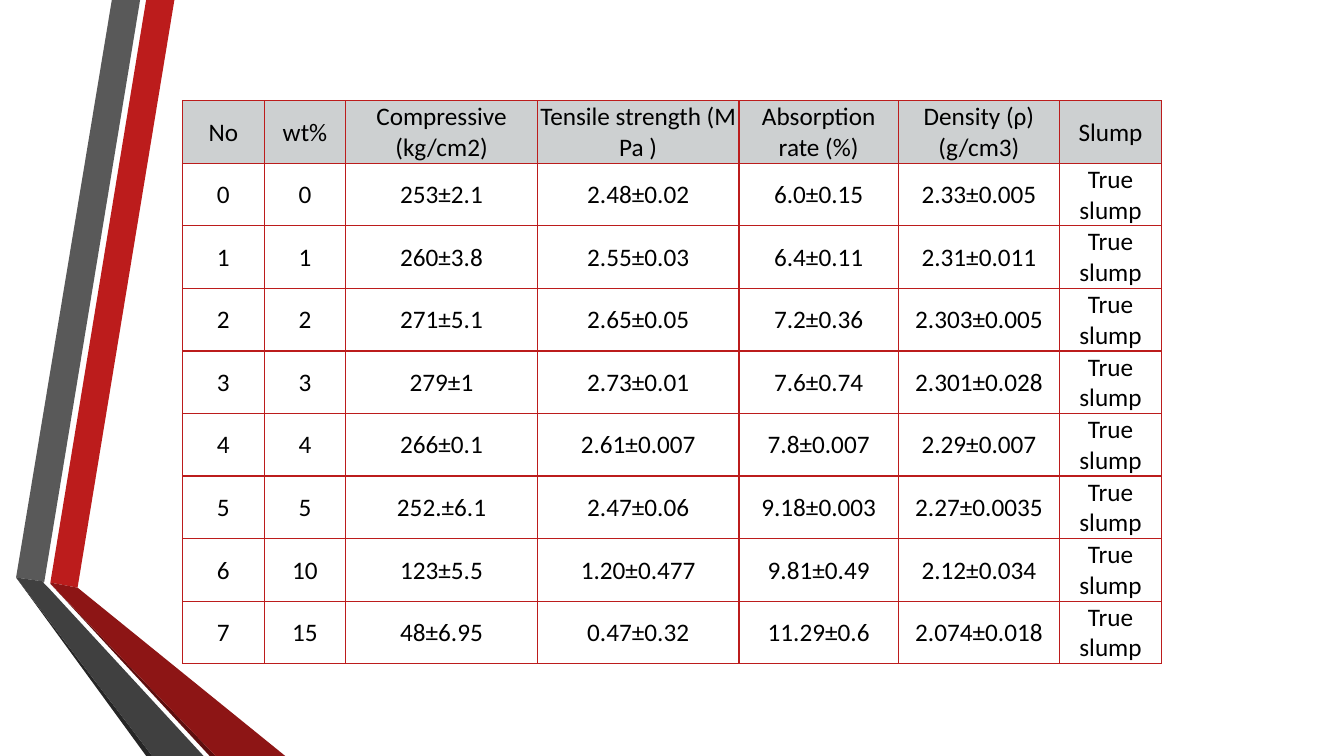
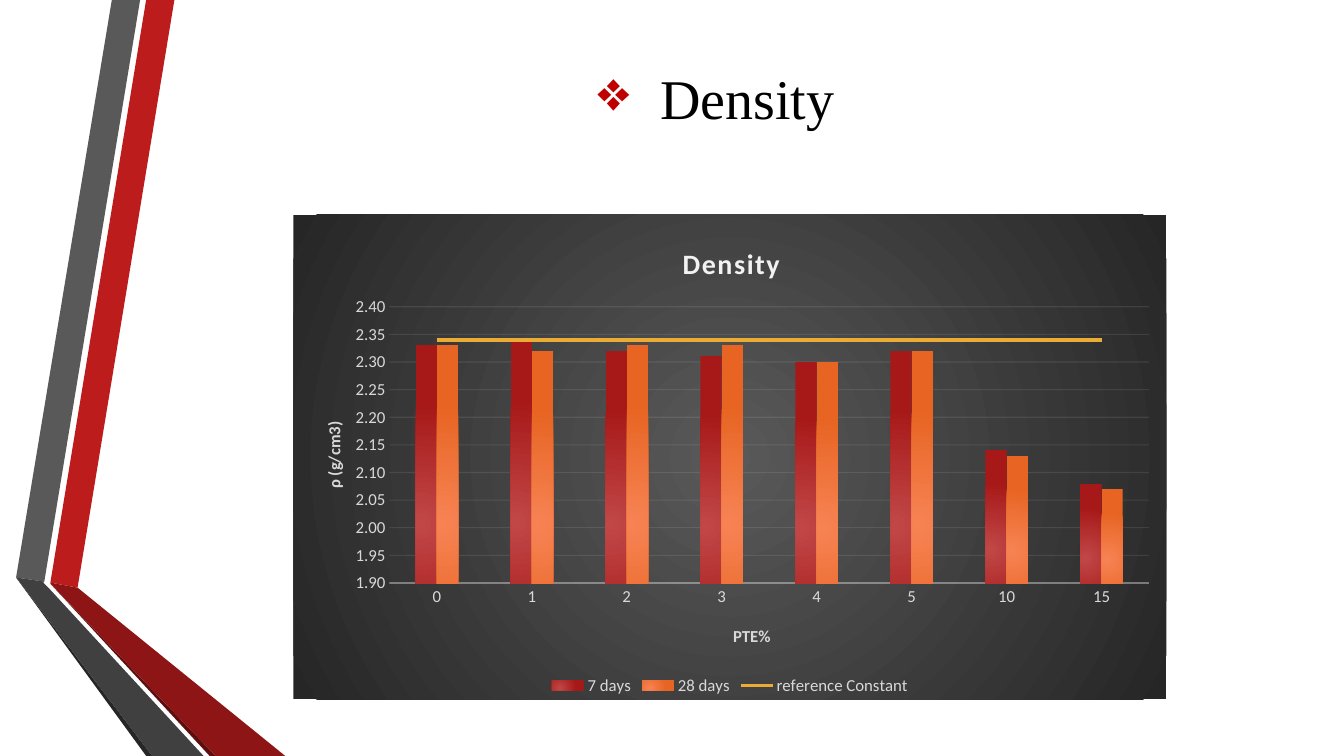
from pptx import Presentation
from pptx.chart.data import CategoryChartData
from pptx.dml.color import RGBColor
from pptx.enum import chart as charts, text as texts
from pptx.oxml import parse_xml
from pptx.oxml.ns import nsdecls, qn
from pptx.util import Inches, Pt

COLOURS = {
    "red": "BC1C1C", "dark_red": "8D1515", "deep_red": "5E0E0E",
    "grey": "595959", "dark_grey": "404040", "deep_grey": "262626",
    "bullet": "C00000", "text": "000000", "header": "CDD0D1",
    "chart_title": "F2F2F2", "chart_text": "D9D9D9", "reference": "EAAC35",
}
BODY_FONT, TITLE_FONT = "Calibri", "Times New Roman"

# Ribbon outlines shared by all slides, back to front
RIBBONS = [
    ("red", [(0.5, 5.78), (0.77, 5.83), (1.73, 0), (1.45, 0)]),
    ("grey", [(1.39, 0), (1.11, 0), (0.16, 5.73), (0.44, 5.77)]),
    ("deep_grey", [(0.16, 5.73), (1.45, 7.5), (1.51, 7.5)]),
    ("deep_red", [(0.5, 5.79), (2.08, 7.5), (2.14, 7.5)]),
    ("dark_red", [(0.5, 5.79), (2.14, 7.5), (2.83, 7.5), (0.77, 5.83), (0.5, 5.78)]),
    ("dark_grey", [(2.02, 7.5), (0.48, 5.83), (0.43, 5.78), (0.44, 5.77),
                   (0.16, 5.73), (1.51, 7.5)]),
]

# Results table
HEADERS = ["No", "wt%", "Compressive (kg/cm2)", "Tensile strength (M Pa )",
           "Absorption rate (%)", "Density (ρ) (g/cm3)", "Slump"]
RESULTS = [
    ("0", "253±2.1", "2.48±0.02", "6.0±0.15", "2.33±0.005"),
    ("1", "260±3.8", "2.55±0.03", "6.4±0.11", "2.31±0.011"),
    ("2", "271±5.1", "2.65±0.05", "7.2±0.36", "2.303±0.005"),
    ("3", "279±1", "2.73±0.01", "7.6±0.74", "2.301±0.028"),
    ("4", "266±0.1", "2.61±0.007", "7.8±0.007", "2.29±0.007"),
    ("5", "252.±6.1", "2.47±0.06", "9.18±0.003", "2.27±0.0035"),
    ("10", "123±5.5", "1.20±0.477", "9.81±0.49", "2.12±0.034"),
    ("15", "48±6.95", "0.47±0.32", "11.29±0.6", "2.074±0.018"),
]
SLUMP = "True slump"
COLUMN_WIDTHS = [0.81, 0.81, 1.9, 2, 1.58, 1.6, 1.01]
ROW_HEIGHT = 0.61

# Density chart
PERCENTAGES = [row[0] for row in RESULTS]
BAR_SERIES = [
    ("7 days", [2.33, 2.34, 2.32, 2.31, 2.3, 2.32, 2.14, 2.08], ("C14747", "A71919")),
    ("28 days", [2.33, 2.32, 2.33, 2.33, 2.3, 2.32, 2.13, 2.07], ("F78354", "E76422")),
]
REFERENCE_NAME, REFERENCE_DENSITY = "reference Constant", 2.34


def rgb(name):
    return RGBColor.from_string(COLOURS[name])


def format_font(font, size, colour="text", name=BODY_FONT, bold=False):
    font.size, font.name, font.bold = Pt(size), name, bold
    font.color.rgb = rgb(colour)


def write_text(text_frame, text, align=texts.PP_ALIGN.CENTER, **font_format):
    text_frame.text = text
    paragraph = text_frame.paragraphs[0]
    paragraph.alignment = align
    format_font(paragraph.runs[0].font, **font_format)
    return paragraph


def add_ribbons(master, slide):
    """Build the ribbons on a slide, then hand them to the master."""
    for number, (colour, points) in enumerate(RIBBONS):
        corners = [(Inches(x), Inches(y)) for x, y in points]
        builder = slide.shapes.build_freeform(*corners[0])
        builder.add_line_segments(corners[1:], close=True)
        shape = builder.convert_to_shape()
        shape.shadow.inherit = False
        shape.fill.solid()
        shape.fill.fore_color.rgb = rgb(colour)
        shape.line.fill.background()
        shape.element.xpath(".//p:cNvPr")[0].set("id", str(100 + number))
        master.shapes.element.insert(2 + number, shape.element)


def add_results_table(slide):
    rows = [HEADERS] + [(str(number), *row, SLUMP) for number, row in enumerate(RESULTS)]
    frame = slide.shapes.add_table(
        len(rows), len(HEADERS), Inches(1.81), Inches(1),
        Inches(sum(COLUMN_WIDTHS)), Inches(ROW_HEIGHT * len(rows)))
    table = frame.table
    table.first_row = table.horz_banding = False
    for column, width in zip(table.columns, COLUMN_WIDTHS):
        column.width = Inches(width)
    for row_number, row in enumerate(rows):
        for column_number, value in enumerate(row):
            cell = table.cell(row_number, column_number)
            write_text(cell.text_frame, value, size=18)
            cell.vertical_anchor = texts.MSO_ANCHOR.MIDDLE
            cell.margin_left = cell.margin_right = cell.margin_top = Inches(0.01)
            cell.margin_bottom = 0
            if row_number == 0:
                cell.fill.solid()
                cell.fill.fore_color.rgb = rgb("header")
            else:
                cell.fill.background()
    # Cell borders
    for properties in frame.element.xpath(".//a:tcPr"):
        for position, side in enumerate("LRTB"):
            properties.insert(position, parse_xml(
                f'<a:ln{side} {nsdecls("a")} w="{Pt(1)}"><a:solidFill>'
                f'<a:srgbClr val="{COLOURS["red"]}"/></a:solidFill></a:ln{side}>'))


def write_title(title, text):
    title.left, title.top = Inches(1.62), Inches(0)
    title.width, title.height = Inches(10.96), Inches(1.92)
    title.text_frame.vertical_anchor = texts.MSO_ANCHOR.MIDDLE
    paragraph = write_text(title.text_frame, text, size=40, name=TITLE_FONT)
    properties = paragraph._p.get_or_add_pPr()
    properties.set("marL", str(Inches(0.62)))
    properties.set("indent", str(-Inches(0.62)))
    properties.append(parse_xml(
        f'<a:buClr {nsdecls("a")}><a:srgbClr val="{COLOURS["bullet"]}"/></a:buClr>'))
    properties.append(parse_xml(f'<a:buChar {nsdecls("a")} char="❖"/>'))


def radial_fill(inner, outer, left, top, right, bottom):
    return parse_xml(
        f'<a:gradFill {nsdecls("a")}><a:gsLst>'
        f'<a:gs pos="0"><a:srgbClr val="{inner}"/></a:gs>'
        f'<a:gs pos="100000"><a:srgbClr val="{outer}"/></a:gs></a:gsLst>'
        f'<a:path path="circle"><a:fillToRect l="{left * 1000}" t="{top * 1000}" '
        f'r="{right * 1000}" b="{bottom * 1000}"/></a:path></a:gradFill>')


def place(element, position, **fractions):
    """Set a manual layout, in fractions of the chart, on a title or plot area."""
    for layout in element.findall(qn("c:layout")):
        element.remove(layout)
    target = '<c:layoutTarget val="inner"/>' if "w" in fractions else ""
    modes = "".join(f'<c:{key}Mode val="edge"/>' for key in "xy")
    values = "".join(f'<c:{key} val="{value}"/>' for key, value in fractions.items())
    element.insert(position, parse_xml(
        f'<c:layout {nsdecls("c")}><c:manualLayout>{target}{modes}{values}'
        f'</c:manualLayout></c:layout>'))


def set_opacity(chart, query, percent):
    for colour in chart.element.xpath(query):
        colour.append(parse_xml(f'<a:alpha {nsdecls("a")} val="{percent * 1000}"/>'))


def move_reference_to_line(chart):
    bars = chart.element.xpath(".//c:barChart")[0]
    reference = bars.findall(qn("c:ser"))[-1]
    for bar_only in reference.findall(qn("c:invertIfNegative")):
        reference.remove(bar_only)
    axes = "".join(f'<c:axId val="{axis.get("val")}"/>' for axis in bars.findall(qn("c:axId")))
    lines = parse_xml(
        f'<c:lineChart {nsdecls("c")}><c:grouping val="standard"/>'
        f'<c:varyColors val="0"/><c:marker val="1"/>{axes}</c:lineChart>')
    lines.insert(2, reference)
    bars.addnext(lines)
    series = chart.plots[1].series[0]
    series.smooth = False
    series.marker.style = charts.XL_MARKER_STYLE.NONE
    series.format.line.width = Pt(2.75)
    series.format.line.color.rgb = rgb("reference")


def add_density_chart(slide):
    data = CategoryChartData(number_format="0.00")
    data.categories = PERCENTAGES
    for name, values, _ in BAR_SERIES:
        data.add_series(name, values)
    data.add_series(REFERENCE_NAME, [REFERENCE_DENSITY] * len(PERCENTAGES))
    chart = slide.shapes.add_chart(
        charts.XL_CHART_TYPE.COLUMN_CLUSTERED, Inches(2.91), Inches(2.13),
        Inches(8.66), Inches(4.81), data).chart
    format_font(chart.font, 12, "chart_text")
    plot = chart.plots[0]
    plot.gap_width, plot.overlap, plot.vary_by_categories = 247, 0, False
    move_reference_to_line(chart)

    # Gradient fills of bars and background
    for number, (series, (_, _, shades)) in enumerate(zip(plot.series, BAR_SERIES), 1):
        series.format.fill.background()
        empty = chart.element.xpath(f".//c:barChart/c:ser[{number}]/c:spPr/a:noFill")[0]
        empty.getparent().replace(empty, radial_fill(*shades, 50, 100, 100, 50))
    background = parse_xml(
        f'<c:spPr {nsdecls("c", "a")}><a:ln><a:noFill/></a:ln></c:spPr>')
    background.insert(0, radial_fill(COLOURS["grey"], COLOURS["deep_grey"], 50, 50, 50, 50))
    chart.element.xpath("./c:chart")[0].addnext(background)

    # Axes
    category_axis, value_axis = chart.category_axis, chart.value_axis
    value_axis.minimum_scale, value_axis.maximum_scale = 1.9, 2.4
    value_axis.major_unit = 0.05
    value_axis.tick_labels.number_format = "0.00"
    value_axis.tick_labels.number_format_is_linked = False
    value_axis.format.line.fill.background()
    for axis in (category_axis, value_axis):
        axis.major_tick_mark = axis.minor_tick_mark = charts.XL_TICK_MARK.NONE
        format_font(axis.tick_labels.font, 12, "chart_text")
    for line, width in ((category_axis.format.line, 1),
                        (value_axis.major_gridlines.format.line, 0.75)):
        line.width = Pt(width)
        line.color.rgb = rgb("chart_title")
    set_opacity(chart, ".//c:catAx/c:spPr//a:srgbClr", 54)
    set_opacity(chart, ".//c:majorGridlines//a:srgbClr", 10)

    # Titles, legend and their places
    for owner, text, size, colour, parent, x, y in (
            (chart, "Density", 20, "chart_title", "c:chart", 0.44, 0.05),
            (category_axis, "PTE%", 12, "chart_text", "c:catAx", 0.5, 0.84),
            (value_axis, "ρ (g/cm3)", 12, "chart_text", "c:valAx", 0.03, 0.42)):
        title = owner.chart_title if owner is chart else owner.axis_title
        paragraph = write_text(title.text_frame, text, size=size, colour=colour, bold=True)
        if owner is chart:
            paragraph.runs[0].font._element.set("spc", "100")
        place(chart.element.xpath(f".//{parent}/c:title")[0], 1, x=x, y=y)
    place(chart.element.xpath(".//c:plotArea")[0], 0, x=0.11, y=0.19, w=0.87, h=0.57)
    chart.has_legend = True
    chart.legend.position = charts.XL_LEGEND_POSITION.BOTTOM
    chart.legend.include_in_layout = False
    format_font(chart.legend.font, 12, "chart_text")


def main():
    presentation = Presentation()
    presentation.slide_width, presentation.slide_height = Inches(13.33), Inches(7.5)
    layouts = presentation.slide_layouts
    results_slide = presentation.slides.add_slide(layouts.get_by_name("Blank"))
    density_slide = presentation.slides.add_slide(layouts.get_by_name("Title Only"))
    add_ribbons(presentation.slide_master, results_slide)
    add_results_table(results_slide)
    write_title(density_slide.shapes.title, "Density")
    add_density_chart(density_slide)
    presentation.save("out.pptx")


if __name__ == "__main__":
    main()
